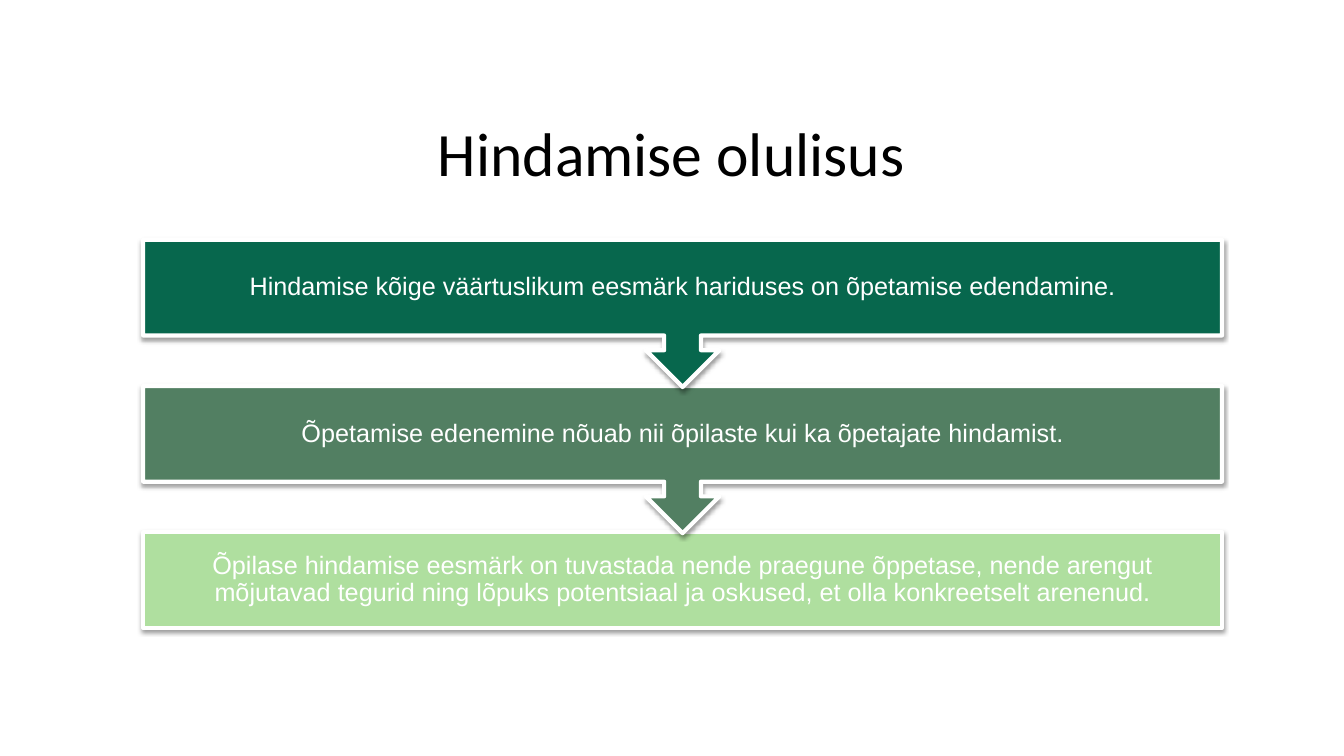
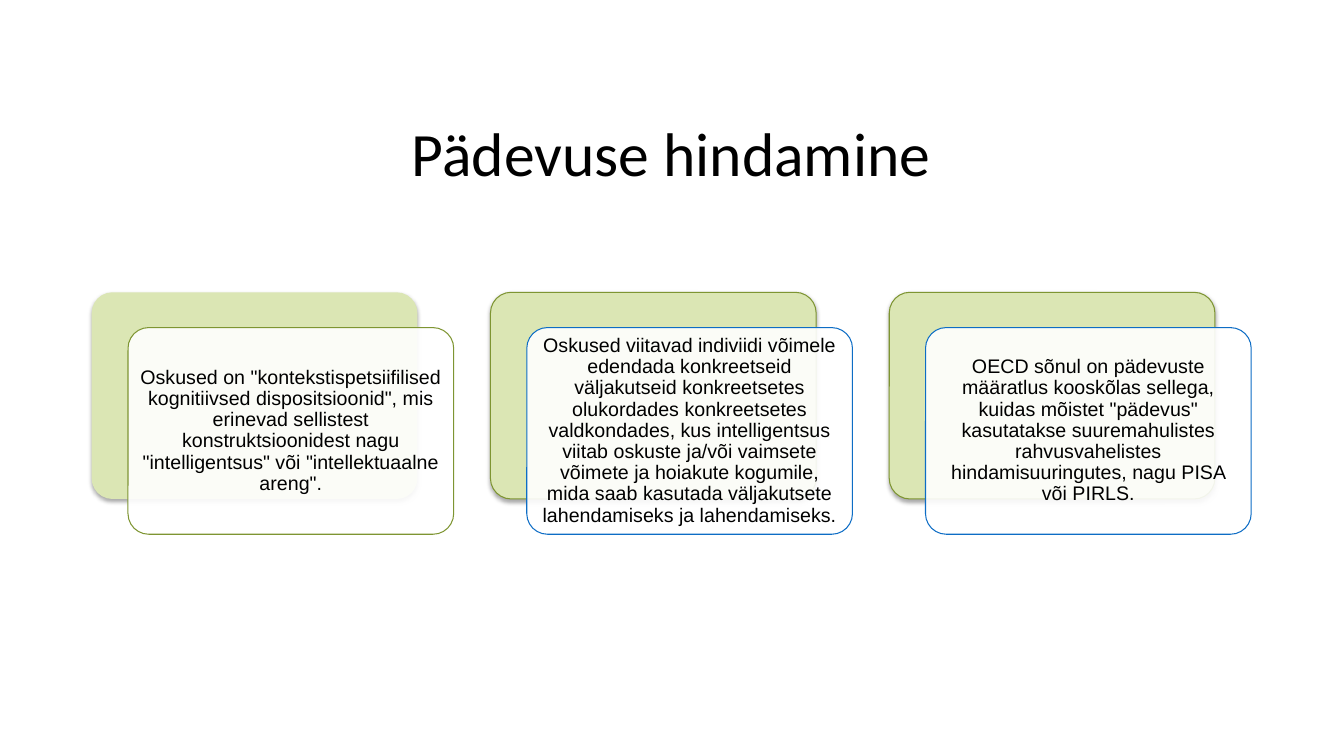
import lxml.etree
import pptx
import pptx.dml.color
import pptx.enum.shapes
import pptx.enum.text
import pptx.oxml.ns
import pptx.util

Inches = pptx.util.Inches
Pt = pptx.util.Pt
RGB = pptx.dml.color.RGBColor
KIND = pptx.enum.shapes.MSO_SHAPE
qn = pptx.oxml.ns.qn

BLACK = RGB(0x00, 0x00, 0x00)
WHITE = RGB(0xFF, 0xFF, 0xFF)
PINE = RGB(0x07, 0x67, 0x4D)
SAGE = RGB(0x52, 0x7F, 0x62)
MINT = RGB(0xAF, 0xDF, 0x9F)
LIME = RGB(0xDB, 0xE6, 0xB4)
OLIVE = RGB(0x7E, 0x95, 0x32)
BLUE = RGB(0x0D, 0x6D, 0xC5)


def write(shape, text, size, font, color, pad_x, pad_y):
    """Put one centred paragraph into the shape."""
    frame = shape.text_frame
    frame.word_wrap = True
    frame.vertical_anchor = pptx.enum.text.MSO_ANCHOR.MIDDLE
    frame.margin_left = frame.margin_right = Inches(pad_x)
    frame.margin_top = frame.margin_bottom = Inches(pad_y)
    para = frame.paragraphs[0]
    para.text = text
    para.alignment = pptx.enum.text.PP_ALIGN.CENTER
    para.line_spacing = 0.9
    para.font.size = Pt(size)
    para.font.name = font
    para.font.color.rgb = color


def block(slide, kind, box, fill, line, width, shade=0):
    """Add a filled shape; shade is the shadow's opacity in percent."""
    shape = slide.shapes.add_shape(kind, *map(Inches, box))
    shape.fill.solid()
    shape.fill.fore_color.rgb = fill
    if line is None:
        shape.line.fill.background()
    else:
        shape.line.color.rgb = line
        shape.line.width = Pt(width)
    shape.shadow.inherit = False
    if shade:
        effects = shape.element.spPr.find(qn("a:effectLst"))
        shadow = lxml.etree.SubElement(
            effects, qn("a:outerShdw"), blurRad=str(Pt(3.1)),
            dist=str(Pt(1.7)), dir="5400000", rotWithShape="0")
        color = lxml.etree.SubElement(shadow, qn("a:srgbClr"), val="000000")
        lxml.etree.SubElement(color, qn("a:alpha"), val=str(shade * 1000))
    return shape


deck = pptx.Presentation()
deck.slide_width = Inches(13.33)
deck.slide_height = Inches(7.5)

slides = []
for text in ("Hindamise olulisus", "Pädevuse hindamine"):
    slide = deck.slides.add_slide(deck.slide_layouts[6])
    title = slide.shapes.add_textbox(
        Inches(0.91), Inches(0.91), Inches(11.5), Inches(1.29))
    write(title, text, 44, "Calibri", BLACK, 0.1, 0.05)
    slides.append(slide)
flow, cards = slides

# Steps, stacked from the bottom up so each arrow tip lies over the next step
steps = [
    (PINE, "Hindamise kõige väärtuslikum eesmärk hariduses on õpetamise "
           "edendamine."),
    (SAGE, "Õpetamise edenemine nõuab nii õpilaste kui ka õpetajate "
           "hindamist."),
    (MINT, "Õpilase hindamise eesmärk on tuvastada nende praegune õppetase, "
           "nende arengut mõjutavad tegurid ning lõpuks potentsiaal ja "
           "oskused, et olla konkreetselt arenenud."),
]
last = len(steps) - 1
for i, (fill, text) in reversed(list(enumerate(steps))):
    kind, high = KIND.DOWN_ARROW_CALLOUT, 1.46
    if i == last:
        kind, high = KIND.RECTANGLE, 0.95
    step = block(flow, kind, (1.42, 2.38 + 1.45 * i, 10.7, high),
                 fill, WHITE, 3, 38)
    if i < last:
        for n, value in enumerate((0.25, 0.25, 0.25, 0.65)):
            step.adjustments[n] = value
    write(step, text, 18, "Arial", WHITE, 0.14, 0.14)

# Cards, each a white panel set off from a green one behind it
notes = [
    (None, OLIVE,
     'Oskused on "kontekstispetsiifilised kognitiivsed dispositsioonid", mis '
     'erinevad sellistest konstruktsioonidest nagu "intelligentsus" või '
     '"intellektuaalne areng".'),
    (OLIVE, BLUE,
     "Oskused viitavad indiviidi võimele edendada konkreetseid väljakutseid "
     "konkreetsetes olukordades konkreetsetes valdkondades, kus "
     "intelligentsus viitab oskuste ja/või vaimsete võimete ja hoiakute "
     "kogumile, mida saab kasutada väljakutsete lahendamiseks ja "
     "lahendamiseks."),
    (OLIVE, BLUE,
     'OECD sõnul on pädevuste määratlus kooskõlas sellega, kuidas mõistet '
     '"pädevus" kasutatakse suuremahulistes rahvusvahelistes '
     'hindamisuuringutes, nagu PISA või PIRLS.'),
]
pitch = (8.82 - 0.91) / 2
for i, (edge, rim, text) in enumerate(notes):
    left = 0.91 + pitch * i
    back = block(cards, KIND.ROUNDED_RECTANGLE, (left, 2.9, 3.23, 2.05),
                 LIME, edge, 0.75, 35)
    front = block(cards, KIND.ROUNDED_RECTANGLE,
                  (left + 0.36, 3.25, 3.23, 2.05), WHITE, rim, 0.75)
    back.adjustments[0] = front.adjustments[0] = 0.1
    tint = front.element.spPr.find(qn("a:solidFill")).find(qn("a:srgbClr"))
    lxml.etree.SubElement(tint, qn("a:alpha"), val="90000")
    # The rounded corners already inset the text by 0.06 inch
    write(front, text, 14, "Arial", BLACK, 0.06, 0.06)

deck.save("out.pptx")
